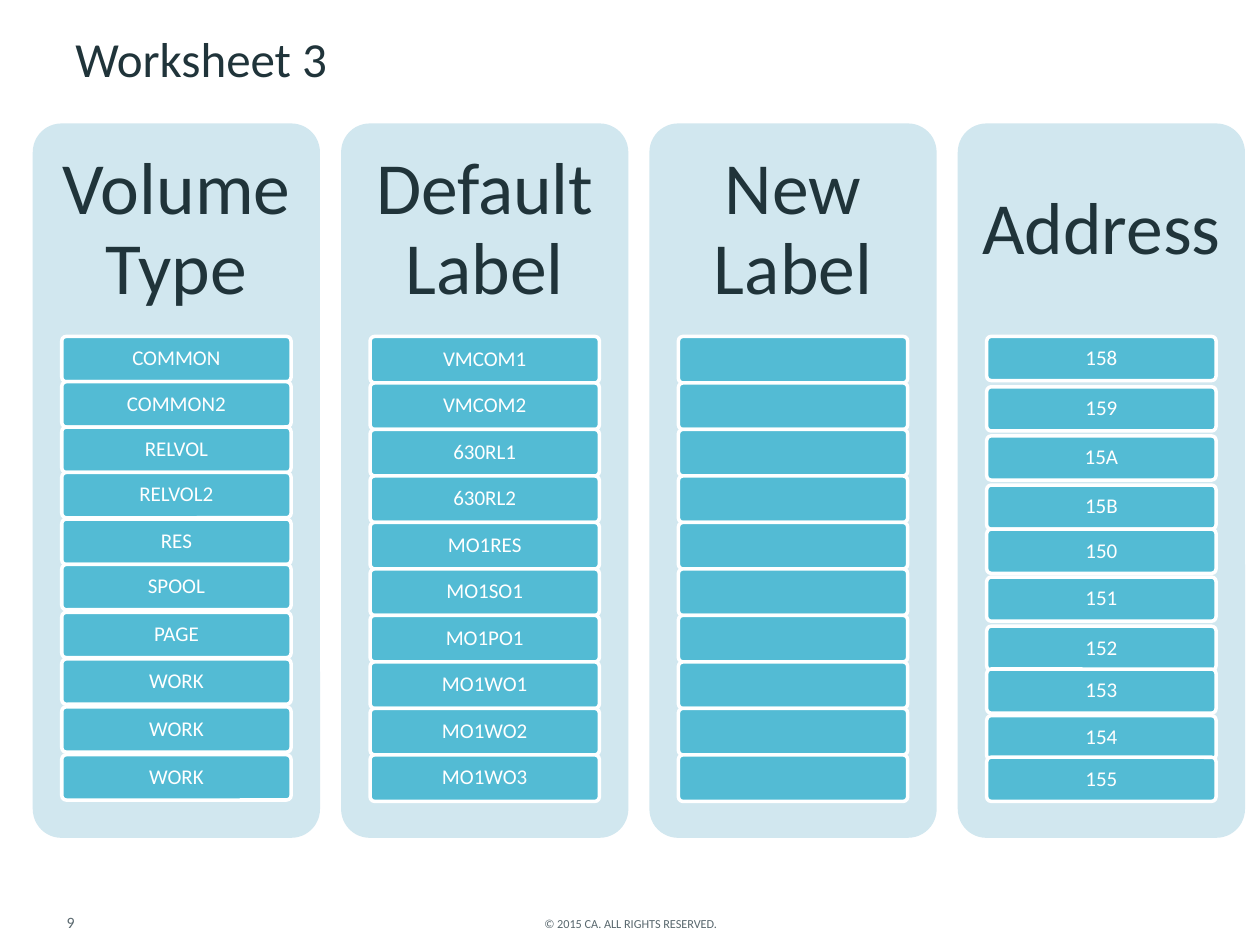
from pptx import Presentation
from pptx.dml.color import RGBColor
from pptx.enum.shapes import MSO_SHAPE as Shape
from pptx.enum.text import MSO_ANCHOR as Anchor, PP_ALIGN as Align
from pptx.util import Inches, Pt

DARK, GREY, PALE, TEAL, WHITE = "20343A", "58676D", "D1E7EF", "53BBD4", "FFFFFF"
EVEN = [2.67 + 0.369 * row for row in range(10)]
COLUMNS = [
    ("Volume Type",
     ["COMMON", "COMMON2", "RELVOL", "RELVOL2", "RES",
      "SPOOL", "PAGE", "WORK", "WORK", "WORK"],
     [2.67, 3.03, 3.39, 3.75, 4.12, 4.48, 4.86, 5.23, 5.61, 5.99], 0.36),
    ("Default Label",
     ["VMCOM1", "VMCOM2", "630RL1", "630RL2", "MO1RES",
      "MO1SO1", "MO1PO1", "MO1WO1", "MO1WO2", "MO1WO3"],
     EVEN, 0.37),
    ("New Label", [""] * 10, EVEN, 0.37),
    ("Address",
     ["158", "159", "15A", "15B", "150", "151", "152", "153", "154", "155"],
     [2.67, 3.07, 3.46, 3.85, 4.2, 4.58, 4.97, 5.31, 5.68, 6.01], 0.35),
]


def color(code):
    return RGBColor.from_string(code)


def write(shape, text, size, code, align=Align.CENTER, anchor=Anchor.MIDDLE,
          inset=None, spacing=None):
    frame = shape.text_frame
    frame.word_wrap = True
    frame.vertical_anchor = anchor
    if inset is not None:
        frame.margin_left = frame.margin_right = Inches(inset)
        frame.margin_top = frame.margin_bottom = Inches(inset)
    para = frame.paragraphs[0]
    para.text = text
    para.alignment = align
    para.line_spacing = spacing
    para.font.name = "Calibri"
    para.font.size = Pt(size)
    para.font.color.rgb = color(code)


def add_text(slide, box, text, size, code, **style):
    shape = slide.shapes.add_textbox(*map(Inches, box))
    write(shape, text, size, code, **style)


def add_card(slide, box, fill, line=None):
    card = slide.shapes.add_shape(Shape.ROUNDED_RECTANGLE, *map(Inches, box))
    card.adjustments[0] = 0.1
    card.shadow.inherit = False
    card.fill.solid()
    card.fill.fore_color.rgb = color(fill)
    if line:
        card.line.color.rgb = color(line)
        card.line.width = Pt(2)
    else:
        card.line.fill.background()
    return card


def add_column(slide, left, head, labels, tops, height):
    add_card(slide, (left, 0.98, 2.28, 5.67), PALE)
    add_text(slide, (left, 0.98, 2.28, 1.7), head, 42, DARK,
             inset=0.17, spacing=0.9)
    for label, top in zip(labels, tops):
        card = add_card(slide, (left + 0.23, top, 1.82, height), TEAL, WHITE)
        if label:
            write(card, label, 12, WHITE, inset=0.03, spacing=0.9)


def main():
    deck = Presentation()
    deck.slide_width, deck.slide_height = Inches(10), Inches(7.5)
    slide = deck.slides.add_slide(deck.slide_layouts[6])
    add_text(slide, (0.43, 7.07, 0.58, 0.37), "9", 9, GREY,
             align=Align.LEFT, anchor=Anchor.BOTTOM)
    add_text(slide, (1.37, 7.07, 7.27, 0.37), "© 2015 CA. ALL RIGHTS RESERVED.",
             7, GREY, anchor=Anchor.BOTTOM)
    add_text(slide, (0.5, 0.23, 9, 0.53), "Worksheet 3", 28, DARK,
             align=Align.LEFT, anchor=Anchor.TOP, spacing=0.9)
    for index, column in enumerate(COLUMNS):
        add_column(slide, 0.26 + 2.447 * index, *column)
    deck.save("out.pptx")


if __name__ == "__main__":
    main()
